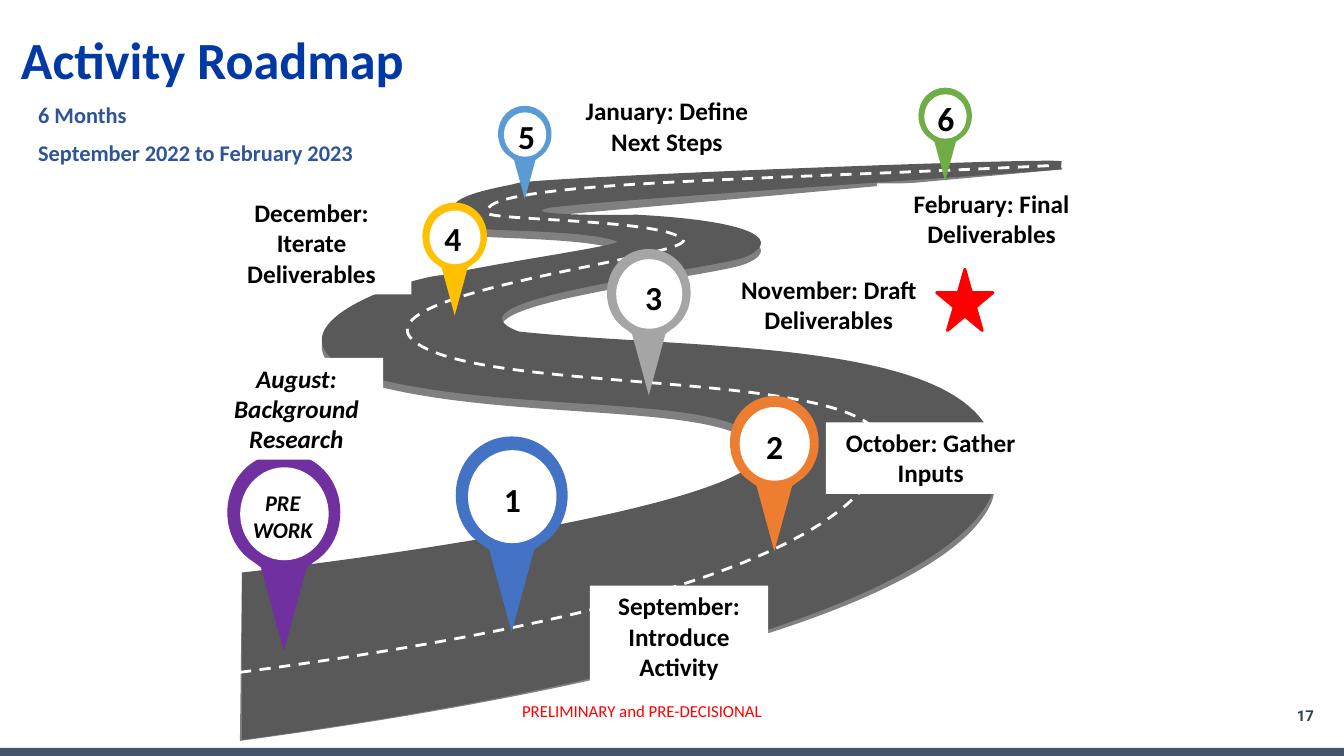
from lxml import etree
from pptx import Presentation, util as u
from pptx.dml.color import RGBColor
from pptx.enum import dml, shapes, text
from pptx.oxml import ns

# Content (lengths in inches on a 13.33 by 7.5 slide)
WIDE, HIGH = 13.33, 7.5
INK = {"white": "FFFFFF", "black": "000000", "red": "FF0000", "bar": "44546A",
       "title": "0039A6", "dates": "2F5597", "number": "28434E",
       "edge": "808080", "road": "595959", "blue": "4472C4", "sky": "5B9BD5",
       "green": "70AD47", "gold": "FFC000", "gray": "A5A5A5",
       "orange": "ED7D31", "purple": "7030A0"}

# Outlines: a start point, then curves (6 numbers) and straight lines (2)
EDGE = [(2.4, 5.76), (4.27, 5.55, 7.7, 5, 7.53, 4.53),
        (7.47, 3.94, 4.91, 4.23, 3.5, 3.76), (2.54, 3.3, 4.1, 2.81, 4.39, 2.8),
        (4.97, 2.68, 6, 2.53, 6.13, 2.48), (5.83, 2.35, 4.64, 2.37, 4.67, 2.33),
        (4.11, 2.05, 4.99, 1.93, 5.12, 1.9), (5.22, 1.84, 10.45, 1.57, 10.51, 1.61),
        (10.45, 1.61, 10.5, 1.64, 10.54, 1.68), (5.46, 2.14),
        (5.09, 2.21, 6.02, 2.21, 6.31, 2.21), (7.61, 2.28, 7.72, 2.49, 7.39, 2.62),
        (7.06, 2.75, 4.27, 3.04, 5.15, 3.36), (7.18, 3.57, 10.3, 3.39, 9.84, 4.97),
        (9.49, 5.82, 7.11, 6.71, 2.38, 7.35)]
ROAD = [(2.4, 5.68), (4.27, 5.47, 7.7, 4.93, 7.53, 4.45),
        (7.47, 3.86, 4.91, 4.15, 3.5, 3.69), (2.54, 3.23, 4.1, 2.74, 4.39, 2.73),
        (4.97, 2.6, 6, 2.46, 6.13, 2.4), (5.83, 2.27, 4.64, 2.3, 4.67, 2.25),
        (4.11, 1.97, 4.99, 1.86, 5.12, 1.82), (5.22, 1.76, 10.48, 1.56, 10.53, 1.6),
        (10.53, 1.63, 10.52, 1.63, 10.53, 1.68), (9.69, 1.75, 6.07, 1.98, 5.46, 2.06),
        (5.09, 2.13, 6.02, 2.14, 6.31, 2.13), (7.61, 2.2, 7.72, 2.41, 7.39, 2.55),
        (7.06, 2.68, 4.27, 2.97, 5.15, 3.29), (7.18, 3.5, 10.3, 3.32, 9.84, 4.9),
        (9.49, 5.75, 7.12, 6.7, 2.4, 7.34)]
LANE = [(2.38, 6.67), (5.88, 6.21, 8.29, 5.55, 8.73, 4.59),
        (9.18, 3.62, 5.12, 3.95, 4.19, 3.44), (3.27, 2.93, 6.85, 2.56, 6.78, 2.38),
        (6.6, 2.17, 4.82, 2.19, 4.83, 2.11), (4.83, 2.03, 4.92, 1.94, 5.86, 1.86),
        (6.8, 1.78, 8.66, 1.73, 10.48, 1.64)]
# Pin outline as shares of its width and height
PIN = [(0.5, 0), (0.78, 0, 1, 0.13, 1, 0.3), (1, 0.41, 0.91, 0.5, 0.77, 0.55),
       (0.7, 0.58), (0.5, 1), (0.3, 0.58), (0.23, 0.55),
       (0.09, 0.5, 0, 0.41, 0, 0.3), (0, 0.13, 0.22, 0, 0.5, 0)]
TALL = 1.75                        # pin height over width
HOLE = (0.11, 0.07, 0.79, 0.475)   # hole as shares of the pin

# Left, top, width, colour
PINS = [(4.52, 4.33, 1.11, "blue"), (4.94, 1.05, 0.53, "sky"),
        (9.11, 0.87, 0.53, "green"), (4.19, 2.01, 0.64, "gold"),
        (6.02, 2.47, 0.83, "gray"), (7.24, 3.93, 0.88, "orange")]
PRE = (2.26, 4.5, 1.11, "purple")
# Words, left, top, width, height
LABELS = [("September: Introduce Activity", 5.85, 5.81, 1.77, 1.01),
          ("October: Gather Inputs", 8.19, 4.19, 2.08, 0.71),
          ("November: Draft Deliverables", 7.24, 2.67, 1.96, 0.71),
          ("December: Iterate Deliverables", 2.1, 1.91, 1.98, 1.01),
          ("February: Final Deliverables", 8.7, 1.82, 2.27, 0.71),
          ("January: Define Next Steps", 5.48, 0.9, 2.27, 0.71)]
AUGUST = ("August: Background Research", 2.08, 3.55, 1.72, 1.01)
# Middle and top of each step number
STEPS = [(5.07, 4.7), (7.67, 4.18), (6.47, 2.7), (4.48, 2.11), (5.21, 1.1), (9.37, 0.92)]

deck = Presentation()
deck.slide_width, deck.slide_height = u.Inches(WIDE), u.Inches(HIGH)
page = deck.slides.add_slide(deck.slide_layouts[6]).shapes


def tint(name):
    return RGBColor.from_string(INK[name])


def paint(shape, fill=None, line=None, width=1):
    shape.shadow.inherit = False
    if fill:
        shape.fill.solid()
        shape.fill.fore_color.rgb = tint(fill)
    else:
        shape.fill.background()
    if line:
        shape.line.color.rgb = tint(line)
        shape.line.width = u.Pt(width)
    else:
        shape.line.fill.background()
    return shape


def preset(kind, box, fill, **line):
    return paint(page.add_shape(kind, *map(u.Inches, box)), fill, **line)


def outline(steps, close=True):
    """Draw straight pieces through all points, then bend each curve's three."""
    dots = [(u.Inches(step[k]), u.Inches(step[k + 1]))
            for step in steps for k in range(0, len(step), 2)]
    pen = page.build_freeform(*dots[0])
    pen.add_line_segments(dots[1:], close=close)
    shape = pen.convert_to_shape()
    legs = iter(list(shape._element.iter(ns.qn("a:lnTo"))))
    for step in steps[1:]:
        trio = [next(legs) for _ in range(len(step) // 2)]
        if len(trio) == 3:
            curve = etree.Element(ns.qn("a:cubicBezTo"))
            trio[0].addprevious(curve)
            for leg in trio:
                curve.append(leg[0])
                leg.getparent().remove(leg)
    return shape


def pin(x, y, wide, color, **line):
    high = wide * TALL
    steps = [[(y + high * v) if k % 2 else (x + wide * v) for k, v in enumerate(step)]
             for step in PIN]
    paint(outline(steps), color, **line)
    a, b, c, d = HOLE
    preset(shapes.MSO_SHAPE.OVAL, (x + a * wide, y + b * high, c * wide, d * high), "white")


def write(shape, lines, size, color, bold=True, italic=False, align="CENTER",
          anchor="TOP", font="Calibri", wrap=True, space=None, before=None):
    frame = shape.text_frame
    frame.word_wrap = wrap
    frame.vertical_anchor = text.MSO_ANCHOR[anchor]
    frame.text = "\n".join(lines)
    for par in frame.paragraphs:
        par.alignment = text.PP_ALIGN[align]
        par.line_spacing, par.space_before = space, before
        par.font.name, par.font.size = font, u.Pt(size)
        par.font.bold, par.font.italic = bold, italic
        par.font.color.rgb = tint(color)


def note(box, *args, **style):
    write(page.add_textbox(*map(u.Inches, box)), *args, **style)


def label(words, *box, italic=False):
    shape = preset(shapes.MSO_SHAPE.RECTANGLE, box, "white")
    write(shape, [words], 18, "black", italic=italic)


# Bottom bar and headings
preset(shapes.MSO_SHAPE.RECTANGLE, (0, 7.42, WIDE, 0.08), "bar")
note((0.28, 0.98, 3.35, 0.64), ["6 Months", "September 2022 to February 2023"],
     16, "dates", align="LEFT", space=0.9, before=u.Pt(10))
note((0.11, -0.31, 12, 1.25), ["Activity Roadmap"], 37.3, "title",
     align="LEFT", anchor="BOTTOM", space=u.Pt(40))

# Road with its dashed lane
paint(outline(EDGE), "edge")
paint(outline(ROAD), "road")
lane = paint(outline(LANE, close=False), line="white", width=2)
lane.line.dash_style = dml.MSO_LINE.DASH

# Pins, month labels and step numbers
for item in PINS:
    pin(*item)
for item in LABELS:
    label(*item)
for n, (mid, top) in enumerate(STEPS, 1):
    note((mid - 0.17, top, 0.34, 0.5), [str(n)], 24, "black")

# Work done before the start
pin(*PRE, line="purple", width=0.75)
note((2.01, 4.8, 1.59, 0.64), ["PRE", "WORK"], 16, "black", italic=True)
label(*AUGUST, italic=True)

# Star, footer and slide number
preset(shapes.MSO_SHAPE.STAR_5_POINT, (9.29, 2.67, 0.56, 0.61), "red", line="red", width=2)
note((5.08, 6.9, 2.67, 0.3), ["PRELIMINARY and PRE-DECISIONAL"], 12, "red",
     bold=False, align="LEFT", wrap=False)
note((12.46, 6.9, 0.67, 0.4), ["17"], 10.7, "number",
     align="RIGHT", anchor="MIDDLE", font="Roboto")

deck.save("out.pptx")
